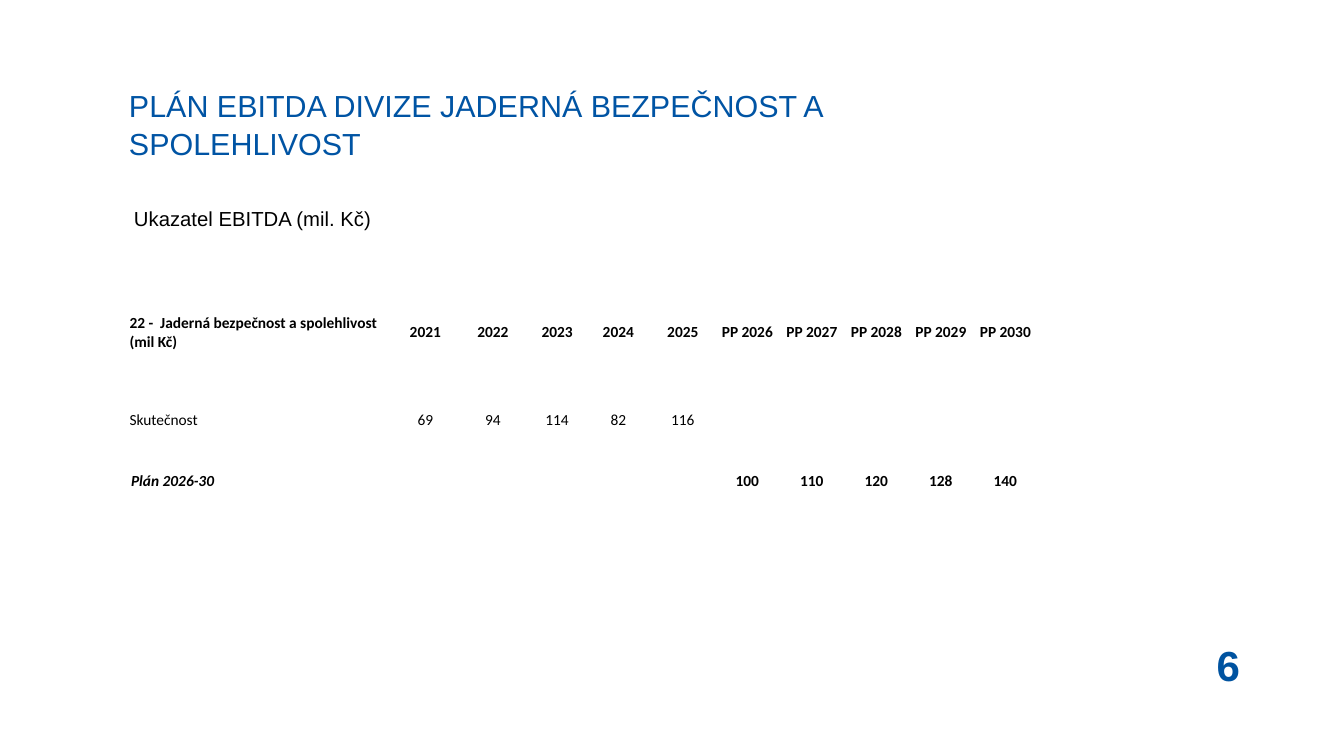
from pptx import Presentation
from pptx.dml.color import RGBColor
from pptx.enum.text import MSO_ANCHOR, PP_ALIGN
from pptx.util import Inches, Pt

WIDTH, HEIGHT = 26.67, 15
WHITE = RGBColor(0xFF, 0xFF, 0xFF)
BLACK = RGBColor(0x00, 0x00, 0x00)
TITLE_BLUE = RGBColor(0x00, 0x54, 0xA4)
NUMBER_BLUE = RGBColor(0x00, 0x53, 0xA0)

LEFT = 0.096  # shared left margin, as a share of the slide width
YEARS = [str(year) for year in range(2021, 2026)]
PLAN_YEARS = [f"PP {year}" for year in range(2026, 2031)]
ACTUALS = [69, 94, 114, 82, 116]
PLAN = [100, 110, 120, 128, 140]
COLUMN_WIDTHS = [5.24, 1.28, 1.4, 1.15] + [1.28] * 7
ROW_HEIGHTS = [2.29, 1.21, 1.21]


class PlanSlide:
    """Draws on one slide; positions are shares of the slide's size."""

    text_font = "Arial"
    table_font = "Calibri"
    table_size = 22

    def __init__(self, slide):
        self.slide = slide
        slide.background.fill.solid()
        slide.background.fill.fore_color.rgb = WHITE

    def place(self, left, top, width, height):
        return (Inches(left * WIDTH), Inches(top * HEIGHT),
                Inches(width * WIDTH), Inches(height * HEIGHT))

    def style(self, paragraph, name, size, color, bold=False, italic=False):
        font = paragraph.font
        font.name, font.size, font.bold, font.italic = name, Pt(size), bold, italic
        font.color.rgb = color

    def text(self, words, box, size, color, bold=False, align=PP_ALIGN.LEFT,
             anchor=MSO_ANCHOR.TOP, inset=None, spacing=None):
        frame = self.slide.shapes.add_textbox(*self.place(*box)).text_frame
        frame.word_wrap = True
        frame.vertical_anchor = anchor
        if inset is not None:
            frame.margin_left = frame.margin_right = Inches(inset)
            frame.margin_top = frame.margin_bottom = Inches(inset)
        paragraph = frame.paragraphs[0]
        paragraph.text = words
        paragraph.alignment = align
        paragraph.line_spacing = spacing
        self.style(paragraph, self.text_font, size, color, bold)

    def table(self, rows, left, top):
        """Adds a plain table; each row is (values, bold, label italic)."""
        box = self.place(left, top, sum(COLUMN_WIDTHS) / WIDTH,
                         sum(ROW_HEIGHTS) / HEIGHT)
        table = self.slide.shapes.add_table(
            len(rows), len(COLUMN_WIDTHS), *box).table
        table.first_row = table.horz_banding = False
        for column, width in zip(table.columns, COLUMN_WIDTHS):
            column.width = Inches(width)
        for row, height, (values, bold, italic) in zip(
                table.rows, ROW_HEIGHTS, rows):
            row.height = Inches(height)
            for index, (cell, value) in enumerate(zip(row.cells, values)):
                is_label = index == 0
                self.cell(cell, value, is_label, bold, italic and is_label)

    def cell(self, cell, value, is_label, bold, italic):
        cell.fill.background()
        cell.vertical_anchor = MSO_ANCHOR.MIDDLE
        cell.margin_left = cell.margin_right = cell.margin_top = Inches(0.01)
        cell.margin_bottom = 0
        if italic:
            cell.margin_left = Inches(0.04)
        paragraph = cell.text_frame.paragraphs[0]
        paragraph.text = str(value)
        paragraph.alignment = PP_ALIGN.LEFT if is_label else PP_ALIGN.CENTER
        self.style(paragraph, self.table_font, self.table_size, BLACK, bold, italic)


def main():
    deck = Presentation()
    deck.slide_width, deck.slide_height = Inches(WIDTH), Inches(HEIGHT)
    plan = PlanSlide(deck.slides.add_slide(deck.slide_layouts[6]))

    plan.text("PLÁN EBITDA DIVIZE JADERNÁ BEZPEČNOST A SPOLEHLIVOST",
              (LEFT, 0.111, 0.65, 0.105), 43.5, TITLE_BLUE,
              anchor=MSO_ANCHOR.MIDDLE, inset=0, spacing=1.05)
    plan.text("6", (0.8755, 0.843, 0.077, 0.063), 60, NUMBER_BLUE,
              bold=True, align=PP_ALIGN.CENTER)
    plan.text("Ukazatel EBITDA (mil. Kč)", (LEFT, 0.27, 0.573, 0.039), 29, BLACK)

    header = ["22 -  Jaderná bezpečnost a spolehlivost (mil Kč)", *YEARS, *PLAN_YEARS]
    actual_row = ["Skutečnost", *ACTUALS, *[""] * len(PLAN)]
    plan_row = ["Plán 2026-30", *[""] * len(ACTUALS), *PLAN]
    plan.table([(header, True, False), (actual_row, False, False),
                (plan_row, True, True)], LEFT, 0.363)

    deck.save("out.pptx")


if __name__ == "__main__":
    main()
